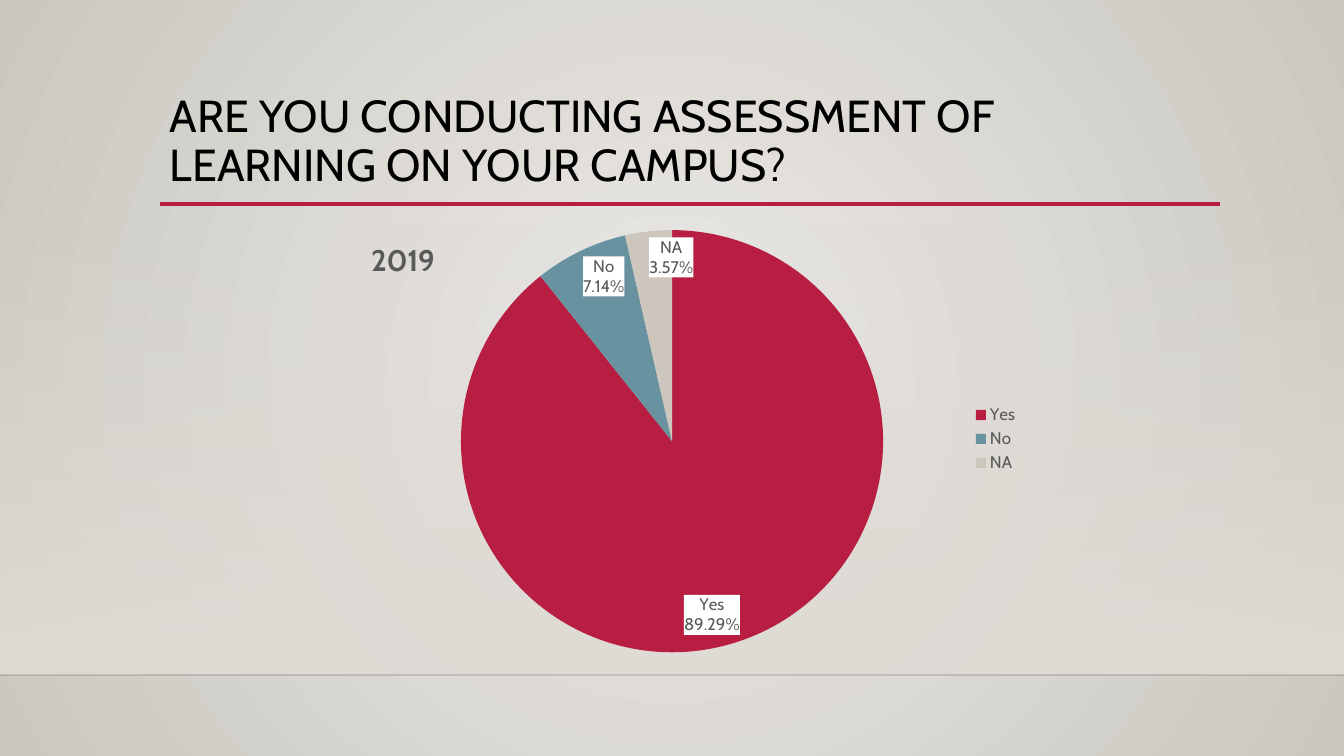
from pptx import Presentation
from pptx import util as u
from pptx.chart.data import CategoryChartData
from pptx.dml.color import RGBColor
from pptx.enum import chart as ch, shapes, text
from pptx.oxml import ns, parse_xml

TITLE = "ARE YOU CONDUCTING ASSESSMENT OF LEARNING ON YOUR CAMPUS?"
YEAR = "2019"
VOTES = {"Yes": 89.29, "No": 7.14, "NA": 3.57}
THEME = {
    "font": "Cabin", "ink": "000000", "grey": "595959", "red": "B71E42",
    "label": "FFFFFF", "floor": "DFDBD5", "edge": "000001",
    "back": ("ECEAE7", "CAC7C1"), "slices": ("B71E42", "6892A0", "CCC6BC"),
    "title": 32, "year": 21.3, "small": 12,
}
WIDE, HIGH = 1344, 756
FLOOR = (0, 223, WIDE, 452)
RULES = [
    ((0, 675, WIDE, 675), "edge", 1, 20),
    ((160, 204, 1220, 204), "red", 2.5, 100),
]
HEAD = (160, 89, 1058, 116)
PIE = (308, 212, 721, 454)
PLOT = {"x": 0.21, "y": 0.04, "w": 0.59, "h": 0.93}
YEAR_AT = {"x": 0.08, "y": 0.05}
NS = ns.nsdecls("a", "c")


def px(*sides):
    return [u.Emu(round(n * 914400 / 100.8)) for n in sides]


def put(item, form):
    for key, val in form.items():
        setattr(item, key, val)


def style(font, size, tint, bold=False):
    put(font, {"name": THEME["font"], "size": u.Pt(size), "bold": bold})
    font.color.rgb = RGBColor.from_string(tint)


def blend(stops, way):
    tags = "".join(
        f'<a:gs pos="{pos}"><a:srgbClr val="{tint}"><a:alpha val="{seen * 1000}"/>'
        f"</a:srgbClr></a:gs>" for pos, tint, seen in stops)
    return parse_xml(f"<a:gradFill {NS}><a:gsLst>{tags}</a:gsLst>{way}</a:gradFill>")


def swap(host, stops, way):
    old = host.find(ns.qn("a:gradFill"))
    host.replace(old, blend(stops, way))


def place(host, spot, index, inner=False):
    for old in host.findall(ns.qn("c:layout")):
        host.remove(old)
    tags = '<c:layoutTarget val="inner"/>' if inner else ""
    tags += "".join(f'<c:{k}Mode val="edge"/>' for k in "xy")
    tags += "".join(f'<c:{k} val="{v}"/>' for k, v in spot.items())
    host.insert(index, parse_xml(
        f"<c:layout {NS}><c:manualLayout>{tags}</c:manualLayout></c:layout>"))


def paint(slide):
    fill = slide.background.fill
    fill.gradient()
    first, last = THEME["back"]
    swap(slide.background._cSld.bg.bgPr, [(0, first, 100), (100000, last, 100)],
         '<a:path path="circle"><a:fillToRect l="50000" t="50000" r="50000" b="50000"/></a:path>')
    floor = slide.shapes.add_shape(shapes.MSO_SHAPE.RECTANGLE, *px(*FLOOR))
    floor.shadow.inherit = False
    floor.line.fill.background()
    floor.fill.gradient()
    tint = THEME["floor"]
    swap(floor._element.spPr, [(0, tint, 0), (100000, tint, 100)],
         '<a:lin ang="5400000" scaled="0"/>')


def rule(slide, ends, tint, width, seen):
    line = slide.shapes.add_connector(shapes.MSO_CONNECTOR.STRAIGHT, *px(*ends))
    line.line.width = u.Pt(width)
    line.line.color.rgb = RGBColor.from_string(THEME[tint])
    props = line._element.spPr
    if seen < 100:
        props.find(".//" + ns.qn("a:srgbClr")).append(
            parse_xml(f'<a:alpha {NS} val="{seen * 1000}"/>'))
    props.append(parse_xml(f"<a:effectLst {NS}/>"))


def head(slide):
    frame = slide.shapes.add_textbox(*px(*HEAD)).text_frame
    put(frame, {"word_wrap": True, "vertical_anchor": text.MSO_ANCHOR.TOP})
    para = frame.paragraphs[0]
    put(para, {"text": TITLE, "line_spacing": 0.9})
    style(para.runs[0].font, THEME["title"], THEME["ink"])


def pie(slide):
    data = CategoryChartData()
    data.categories = list(VOTES)
    data.add_series(YEAR, list(VOTES.values()))
    chart = slide.shapes.add_chart(ch.XL_CHART_TYPE.PIE, *px(*PIE), data).chart
    style(chart.font, THEME["small"], THEME["grey"])
    put(chart, {"has_title": True, "has_legend": True})

    title = chart.chart_title
    title.text_frame.text = YEAR
    style(title.text_frame.paragraphs[0].runs[0].font,
          THEME["year"], THEME["grey"], True)
    place(title._element, YEAR_AT, 1)
    place(chart._chartSpace.chart.plotArea, PLOT, 0, True)

    put(chart.legend, {"position": ch.XL_LEGEND_POSITION.RIGHT,
                       "include_in_layout": False})
    style(chart.legend.font, THEME["small"], THEME["grey"])

    plot = chart.plots[0]
    plot.vary_by_categories = True
    row = plot.series[0]
    for at, tint in enumerate(THEME["slices"]):
        fill = row.points[at].format.fill
        fill.solid()
        fill.fore_color.rgb = RGBColor.from_string(tint)
    marks = row.data_labels
    put(marks, {
        "show_percentage": True, "show_category_name": True, "show_value": False,
        "number_format": "0.00%", "number_format_is_linked": False,
        "position": ch.XL_LABEL_POSITION.INSIDE_END,
    })
    style(marks.font, THEME["small"], THEME["grey"])
    marks._element.find(ns.qn("c:txPr")).addprevious(parse_xml(
        f'<c:spPr {NS}><a:solidFill><a:srgbClr val="{THEME["label"]}"/>'
        f"</a:solidFill></c:spPr>"))


def main():
    deck = Presentation()
    wide, high = px(WIDE, HIGH)
    put(deck, {"slide_width": wide, "slide_height": high})
    slide = deck.slides.add_slide(deck.slide_layouts[6])
    paint(slide)
    for item in RULES:
        rule(slide, *item)
    head(slide)
    pie(slide)
    deck.save("out.pptx")


if __name__ == "__main__":
    main()
